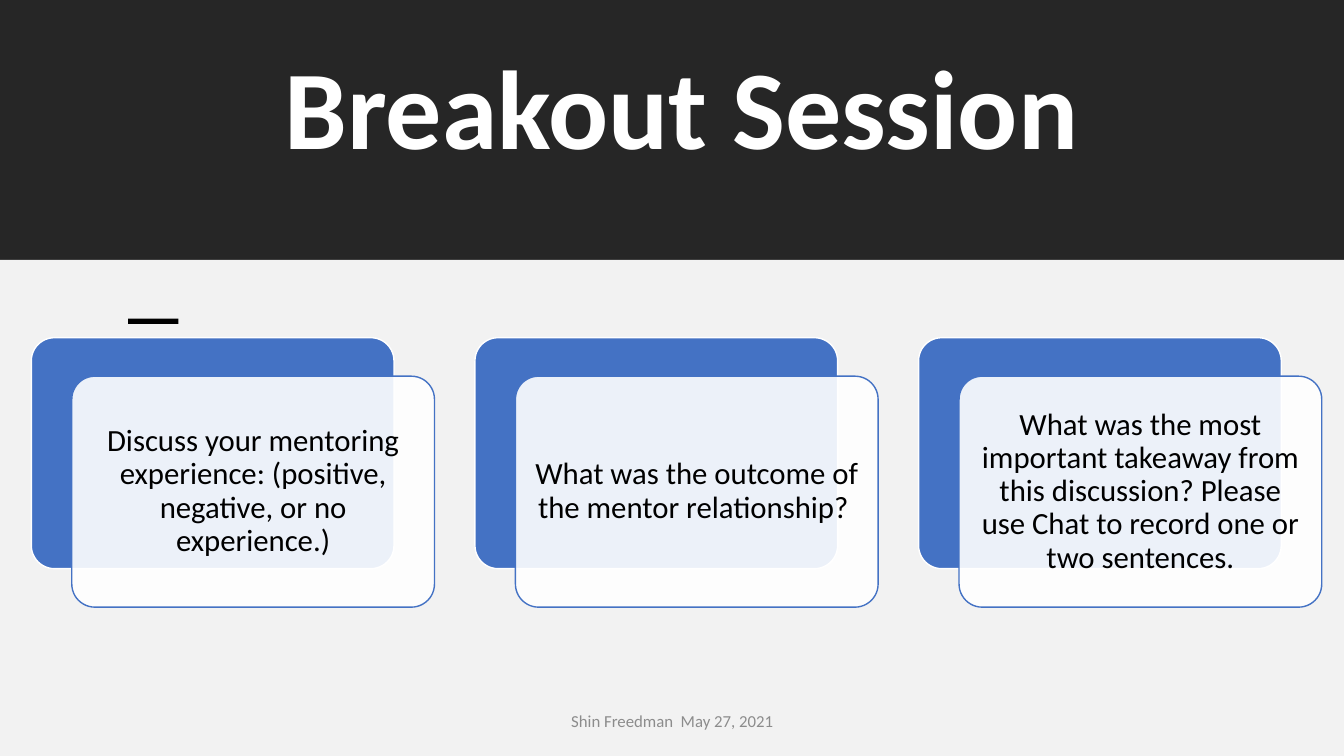
import pptx
import pptx.dml.color
import pptx.enum.shapes
import pptx.enum.text
import pptx.oxml.ns
import pptx.util
from lxml import etree

Cm = pptx.util.Cm
Pt = pptx.util.Pt
RGBColor = pptx.dml.color.RGBColor
Shape = pptx.enum.shapes.MSO_SHAPE
Anchor = pptx.enum.text.MSO_ANCHOR
qn = pptx.oxml.ns.qn

WHITE = RGBColor(0xFF, 0xFF, 0xFF)
BLACK = RGBColor(0x00, 0x00, 0x00)
CHARCOAL = RGBColor(0x26, 0x26, 0x26)
PALE_GREY = RGBColor(0xF2, 0xF2, 0xF2)
FOOTER_GREY = RGBColor(0x8C, 0x8C, 0x8C)
BLUE = RGBColor(0x44, 0x72, 0xC4)

SLIDE_WIDTH, SLIDE_HEIGHT = 33.87, 19.05
BANNER_HEIGHT = 6.55
CARD_LEFT, CARD_TOP = 0.79, 8.51
CARD_WIDTH, CARD_HEIGHT = 9.14, 5.82
CARD_PITCH = 11.18
FRONT_SHIFT_X, FRONT_SHIFT_Y = 1.02, 0.97

QUESTIONS = [
    "Discuss your mentoring experience: (positive, negative, or no experience.)",
    "What was the outcome of the mentor relationship? ",
    "What was the most important takeaway from this discussion? "
    "Please use Chat to record one or two sentences.",
]


class SlideBuilder:
    font_name = "Calibri"
    card_inset = Cm(0.24)

    def __init__(self, slide):
        self.slide = slide

    def box(self, kind, left, top, width, height, fill, line=None):
        shape = self.slide.shapes.add_shape(
            kind, Cm(left), Cm(top), Cm(width), Cm(height))
        shape.shadow.inherit = False
        shape.fill.solid()
        shape.fill.fore_color.rgb = fill
        if line is None:
            shape.line.fill.background()
        else:
            shape.line.color.rgb = line
            shape.line.width = Pt(1)
        return shape

    def panel(self, left, top, width, height, fill):
        return self.box(Shape.RECTANGLE, left, top, width, height, fill)

    def rounded(self, left, top, fill, line):
        shape = self.box(Shape.ROUNDED_RECTANGLE, left, top,
                         CARD_WIDTH, CARD_HEIGHT, fill, line)
        shape.adjustments[0] = 0.1
        return shape

    def set_text(self, shape, text, size, color, anchor, bold=False, spacing=None):
        frame = shape.text_frame
        frame.word_wrap = True
        frame.vertical_anchor = anchor
        frame.text = text
        paragraph = frame.paragraphs[0]
        paragraph.alignment = pptx.enum.text.PP_ALIGN.CENTER
        paragraph.line_spacing = spacing
        font = paragraph.runs[0].font
        font.name = self.font_name
        font.size = Pt(size)
        font.bold = bold
        font.color.rgb = color

    def label(self, left, top, width, height, *text_style, **options):
        shape = self.slide.shapes.add_textbox(
            Cm(left), Cm(top), Cm(width), Cm(height))
        self.set_text(shape, *text_style, **options)

    def card(self, left, top, question):
        self.rounded(left, top, BLUE, WHITE)
        front = self.rounded(left + FRONT_SHIFT_X, top + FRONT_SHIFT_Y, WHITE, BLUE)
        fill_color = front.element.spPr.find(qn("a:solidFill"))[0]
        etree.SubElement(fill_color, qn("a:alpha")).set("val", "90000")
        frame = front.text_frame
        frame.margin_left = frame.margin_right = self.card_inset
        frame.margin_top = frame.margin_bottom = self.card_inset
        self.set_text(front, question, 22, BLACK, Anchor.MIDDLE, spacing=0.9)


def main():
    presentation = pptx.Presentation()
    presentation.slide_width = Cm(SLIDE_WIDTH)
    presentation.slide_height = Cm(SLIDE_HEIGHT)
    builder = SlideBuilder(
        presentation.slides.add_slide(presentation.slide_layouts[6]))

    builder.panel(0, 0, SLIDE_WIDTH, BANNER_HEIGHT, CHARCOAL)
    builder.label(3.45, 0.56, 27.48, 3.94, "Breakout Session", 80, WHITE,
                  Anchor.BOTTOM, bold=True, spacing=0.9)
    builder.panel(0, BANNER_HEIGHT, SLIDE_WIDTH,
                  SLIDE_HEIGHT - BANNER_HEIGHT, PALE_GREY)
    builder.panel(3.23, 8.03, 1.27, 0.13, BLACK)
    for index, question in enumerate(QUESTIONS):
        builder.card(CARD_LEFT + index * CARD_PITCH, CARD_TOP, question)
    builder.label(11.23, 17.65, 11.43, 1.02, "Shin Freedman  May 27, 2021",
                  12, FOOTER_GREY, Anchor.MIDDLE)

    presentation.save("out.pptx")


if __name__ == "__main__":
    main()
